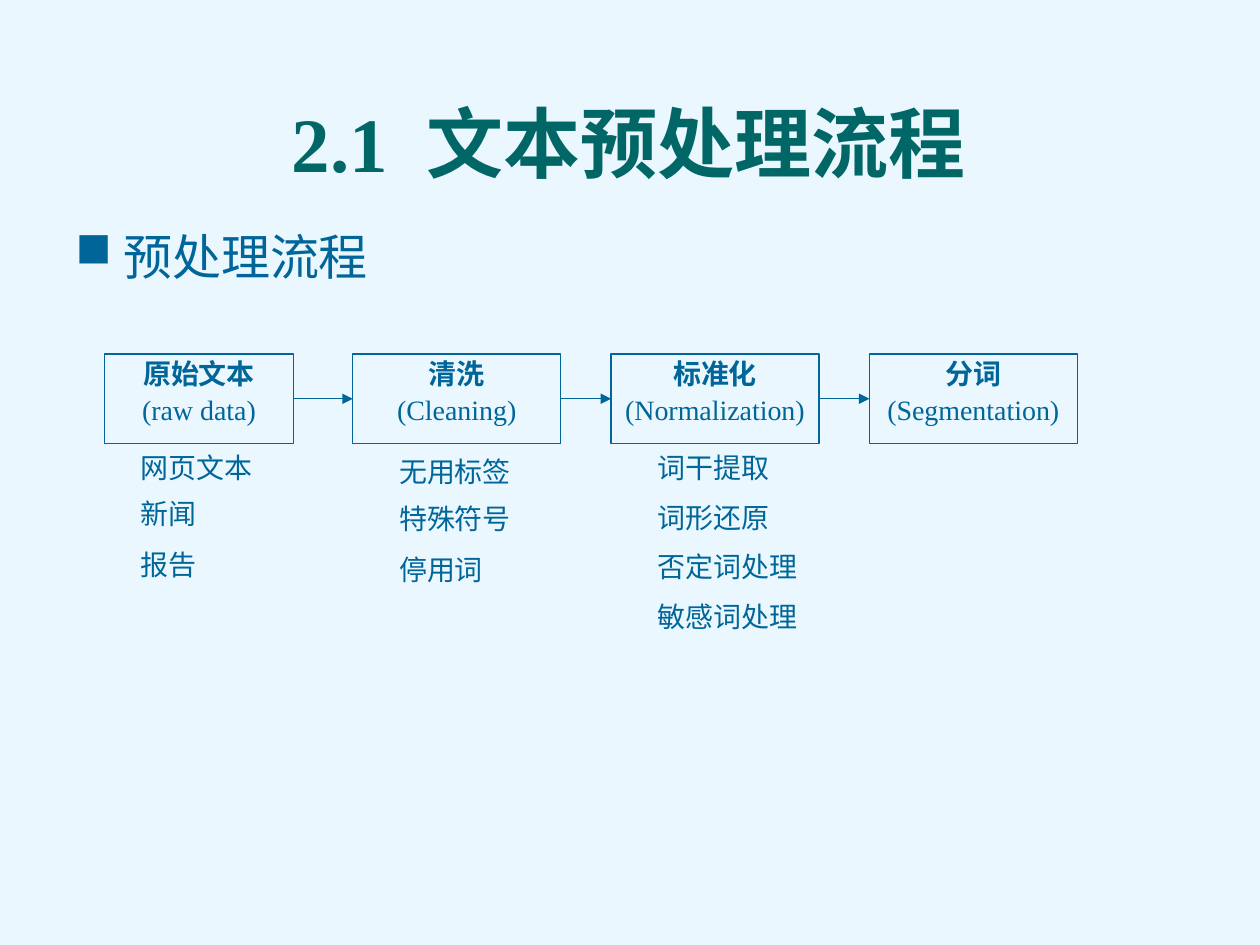
from dataclasses import dataclass

from lxml import etree
from pptx import Presentation
from pptx.dml.color import RGBColor
from pptx.enum.shapes import MSO_CONNECTOR, MSO_SHAPE
from pptx.enum.text import MSO_ANCHOR, MSO_AUTO_SIZE, PP_ALIGN
from pptx.oxml.ns import qn
from pptx.shapes.autoshape import Shape
from pptx.slide import Slide
from pptx.text.text import _Paragraph
from pptx.util import Inches, Pt

STRAIGHT = MSO_CONNECTOR.STRAIGHT
RECTANGLE = MSO_SHAPE.RECTANGLE
TOP, BOTTOM = MSO_ANCHOR.TOP, MSO_ANCHOR.BOTTOM
FIT_SHAPE = MSO_AUTO_SIZE.SHAPE_TO_FIT_TEXT
CENTER = PP_ALIGN.CENTER
LEFT_SIDE, RIGHT_SIDE = 1, 3

FONT = "Times New Roman"
COLORS = {"background": "EBF7FF", "title": "006666", "ink": "006699"}
FIRST_COLUMN, COLUMN_PITCH = 0.75, 2.05
STAGE_TOP, STAGE_HEIGHT = 2.81, 0.71
ITEM_INDENT, ITEM_HEIGHT = 0.27, 0.37
CHARACTER_WIDTH, ITEM_MARGIN = 0.22, 0.22


@dataclass
class Item:
    text: str
    top: float


@dataclass
class Stage:
    name: str
    english: str
    items: tuple[Item, ...] = ()
    inset: float = 0
    width: float = 1.65


STAGES = (
    Stage("原始文本", "(raw data)",
          (Item("网页文本", 3.53), Item("新闻", 3.89), Item("报告", 4.3)), 0.08, 1.5),
    Stage("清洗", "(Cleaning)",
          (Item("无用标签", 3.56), Item("特殊符号", 3.93), Item("停用词", 4.34))),
    Stage("标准化", "(Normalization)",
          (Item("词干提取", 3.53), Item("词形还原", 3.92),
           Item("否定词处理", 4.31), Item("敏感词处理", 4.71))),
    Stage("分词", "(Segmentation)"),
)


def rgb(color: str) -> RGBColor:
    return RGBColor.from_string(COLORS[color])


def style(paragraph: _Paragraph, size: float, color: str = "ink", bold: bool = False) -> None:
    font = paragraph.font
    font.name, font.size, font.bold = FONT, Pt(size), bold
    font.color.rgb = rgb(color)


def add_text(slide: Slide, left: float, top: float, width: float, height: float) -> Shape:
    return slide.shapes.add_textbox(Inches(left), Inches(top), Inches(width), Inches(height))


def add_title(slide: Slide) -> None:
    frame = add_text(slide, 0.48, 0.11, 9.02, 1.44).text_frame
    frame.word_wrap = True
    frame.vertical_anchor = BOTTOM
    heading = frame.paragraphs[0]
    heading.alignment, heading.line_spacing = CENTER, 0.9
    style(heading, 44, "title", True)
    number, gap, words = (heading.add_run() for _ in range(3))
    number.text, gap.text, words.text = "2.1", " ", "文本预处理流程"
    gap._r.get_or_add_rPr().set("spc", "1100")


def add_topic(slide: Slide) -> None:
    frame = add_text(slide, 0.5, 1.75, 9, 4.87).text_frame
    frame.word_wrap = True
    topic = frame.paragraphs[0]
    topic.text = "预处理流程"
    topic.space_before = Pt(5.6)
    style(topic, 28)
    properties = topic._p.get_or_add_pPr()
    properties.set("marL", str(Inches(0.38)))
    properties.set("indent", str(-Inches(0.38)))
    bullet = etree.Element(qn("a:buChar"), char="■")
    properties.find(qn("a:defRPr")).addprevious(bullet)


def add_stage(slide: Slide, stage: Stage, column: int) -> Shape:
    left = FIRST_COLUMN + column * COLUMN_PITCH
    box = slide.shapes.add_shape(RECTANGLE, Inches(left + stage.inset), Inches(STAGE_TOP),
                                 Inches(stage.width), Inches(STAGE_HEIGHT))
    box.shadow.inherit = False
    box.fill.background()
    box.line.color.rgb = rgb("ink")
    box.line.width = Pt(0.75)
    frame = box.text_frame
    frame.vertical_anchor = TOP
    frame.word_wrap = True
    frame.text = f"{stage.name}\n{stage.english}"
    for paragraph, bold in zip(frame.paragraphs, (True, False)):
        paragraph.alignment, paragraph.line_spacing = CENTER, 0.9
        paragraph.space_before = Pt(3.2)
        style(paragraph, 16, bold=bold)
    for item in stage.items:
        add_item(slide, item, left + ITEM_INDENT)
    return box


def add_item(slide: Slide, item: Item, left: float) -> None:
    width = max(4, len(item.text)) * CHARACTER_WIDTH + ITEM_MARGIN
    frame = add_text(slide, left, item.top, width, ITEM_HEIGHT).text_frame
    frame.auto_size = FIT_SHAPE
    frame.word_wrap = True
    frame.text = item.text
    style(frame.paragraphs[0], 16)


def add_arrow(slide: Slide, source: Shape, target: Shape) -> None:
    arrow = slide.shapes.add_connector(STRAIGHT, 0, 0, 0, 0)
    arrow.begin_connect(source, RIGHT_SIDE)
    arrow.end_connect(target, LEFT_SIDE)
    arrow.line.color.rgb = rgb("ink")
    arrow.line.width = Pt(0.75)
    etree.SubElement(arrow.line._get_or_add_ln(), qn("a:tailEnd"), type="triangle")
    etree.SubElement(arrow._element.spPr, qn("a:effectLst"))


def main() -> None:
    deck = Presentation()
    deck.slide_width, deck.slide_height = Inches(10), Inches(7.5)
    slide = deck.slides.add_slide(deck.slide_layouts[6])
    slide.background.fill.solid()
    slide.background.fill.fore_color.rgb = rgb("background")
    add_title(slide)
    add_topic(slide)
    boxes = [add_stage(slide, stage, column) for column, stage in enumerate(STAGES)]
    for source, target in zip(boxes, boxes[1:]):
        add_arrow(slide, source, target)
    deck.save("out.pptx")


if __name__ == "__main__":
    main()
